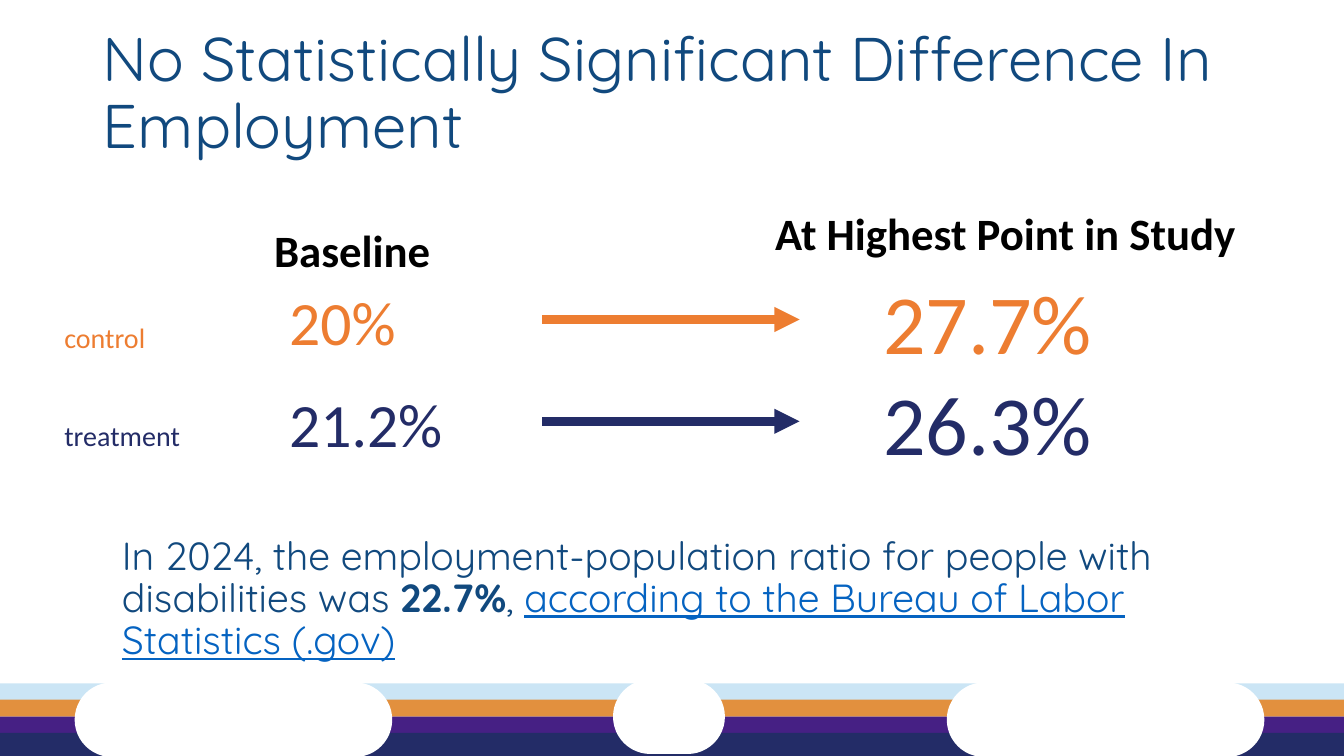
from lxml.etree import SubElement
from pptx import Presentation
from pptx.dml.color import RGBColor
from pptx.enum.shapes import MSO_CONNECTOR, MSO_SHAPE
from pptx.enum.text import MSO_ANCHOR, MSO_AUTO_SIZE, PP_ALIGN
from pptx.oxml.ns import qn
from pptx.util import Inches, Pt

BLUE, NAVY, ORANGE, BLACK, LINK = "11497E", "232C67", "ED7D31", "000000", "0563C1"
STRIPES = [("CBE5F5", 0, 0.17), ("E2903E", 0.16, 0.17), ("462084", 0.33, 0.17), (NAVY, 0.49, 0.24)]
CUTOUTS = [(9.39, -0.01, 3.15), (0.74, -0.01, 3.15), (6.08, -0.04, 1.11)]
GROUPS = [("control", "20%", "27.7%", ORANGE, 0.5), ("treatment", "21.2%", "26.3%", NAVY, 0.46)]


def color(value):
    return RGBColor.from_string(value)


def place(shape, left, top, width, height):
    shape.left, shape.top = Inches(left), Inches(top)
    shape.width, shape.height = Inches(width), Inches(height)


def add_span(para, text, size, fill, name="Calibri", bold=False, underline=False):
    span = para.add_run()
    span.text = text
    font = span.font
    font.name, font.size, font.bold, font.underline = name, Pt(size), bold, underline
    font.color.rgb = color(fill)


def add_label(page, left, top, width, height, text, size, fill, bold=False):
    box = page.shapes.add_textbox(Inches(left), Inches(top), Inches(width), Inches(height))
    box.text_frame.word_wrap = True
    add_span(box.text_frame.paragraphs[0], text, size, fill, bold=bold)


def add_solid(page, kind, left, top, width, height, fill):
    shape = page.shapes.add_shape(kind, Inches(left), Inches(top), Inches(width), Inches(height))
    shape.shadow.inherit = False
    shape.fill.solid()
    shape.fill.fore_color.rgb = color(fill)
    shape.line.fill.background()
    return shape


def add_arrow(page, left, top, length, fill):
    arrow = page.shapes.add_connector(
        MSO_CONNECTOR.STRAIGHT, Inches(left), Inches(top), Inches(left + length), Inches(top))
    arrow.line.color.rgb = color(fill)
    arrow.line.width = Pt(6)
    SubElement(arrow.line._get_or_add_ln(), qn("a:tailEnd"), type="triangle")
    SubElement(arrow._element.spPr, qn("a:effectLst"))


def add_footer_band(page, left, top, width):
    """Draw the striped footer with white rounded gaps in it."""
    for fill, offset, height in STRIPES:
        add_solid(page, MSO_SHAPE.RECTANGLE, left, top + offset, width, height, fill)
    for offset, rise, gap_width in CUTOUTS:
        gap = add_solid(page, MSO_SHAPE.ROUNDED_RECTANGLE,
                        left + offset, top + rise, gap_width, 0.74, "FFFFFF")
        gap.adjustments[0] = 0.5


def fill_title(page, left, top, width, height):
    title = page.shapes.title
    place(title, left, top, width, height)
    frame = title.text_frame
    frame.word_wrap = True
    frame.auto_size = MSO_AUTO_SIZE.NONE
    frame.vertical_anchor = MSO_ANCHOR.MIDDLE
    para = frame.paragraphs[0]
    para.alignment = PP_ALIGN.LEFT
    para.line_spacing = 0.9
    add_span(para, "No Statistically Significant Difference In Employment", 44, BLUE, "Quicksand")


def add_comparison(page, left, top):
    """Place the column headings and one row per study group."""
    add_label(page, left + 2.08, top + 0.17, 3.55, 0.64, "Baseline", 32, BLACK, bold=True)
    add_label(page, left + 7.05, top, 4.98, 0.64, "At Highest Point in Study", 32, BLACK, bold=True)
    for index, (group, baseline, highest, fill, label_drop) in enumerate(GROUPS):
        row_top = top + 0.64 + index * 1.01
        add_label(page, left, row_top + label_drop, 2.33, 0.44, group, 20, fill)
        add_label(page, left + 2.23, row_top + 0.14, 2.9, 0.84, baseline, 44, fill)
        add_arrow(page, left + 4.84, row_top + 0.54, 2.55, fill)
        add_label(page, left + 8.12, row_top, 3.32, 1.11, highest, 60, fill)


def fill_body(page, left, top, width, height):
    body = page.placeholders[1]
    place(body, left, top, width, height)
    frame = body.text_frame
    frame.word_wrap = True
    frame.auto_size = MSO_AUTO_SIZE.NONE
    para = frame.paragraphs[0]
    para.line_spacing = 0.9
    para.space_before = Pt(0)
    properties = para._p.get_or_add_pPr()
    properties.set("marL", "0")
    properties.set("indent", "0")
    SubElement(properties, qn("a:buNone"))
    add_span(para, "In 2024, the employment-population ratio for people with disabilities was ",
             28, BLUE, "Quicksand")
    add_span(para, "22.7%", 28, BLUE, "Quicksand", bold=True)
    add_span(para, ", ", 28, BLUE, "Quicksand")
    add_span(para, "according to the Bureau of Labor Statistics (.gov)",
             28, LINK, "Quicksand", underline=True)


def main():
    deck = Presentation()
    deck.slide_width, deck.slide_height = Inches(13.33), Inches(7.5)
    page = deck.slides.add_slide(deck.slide_layouts[1])
    add_footer_band(page, 0, 6.78, 13.33)
    fill_title(page, 0.92, 0.22, 11.5, 1.45)
    add_comparison(page, 0.54, 1.99)
    fill_body(page, 1.11, 5.27, 11.5, 1.38)
    deck.save("out.pptx")


if __name__ == "__main__":
    main()
